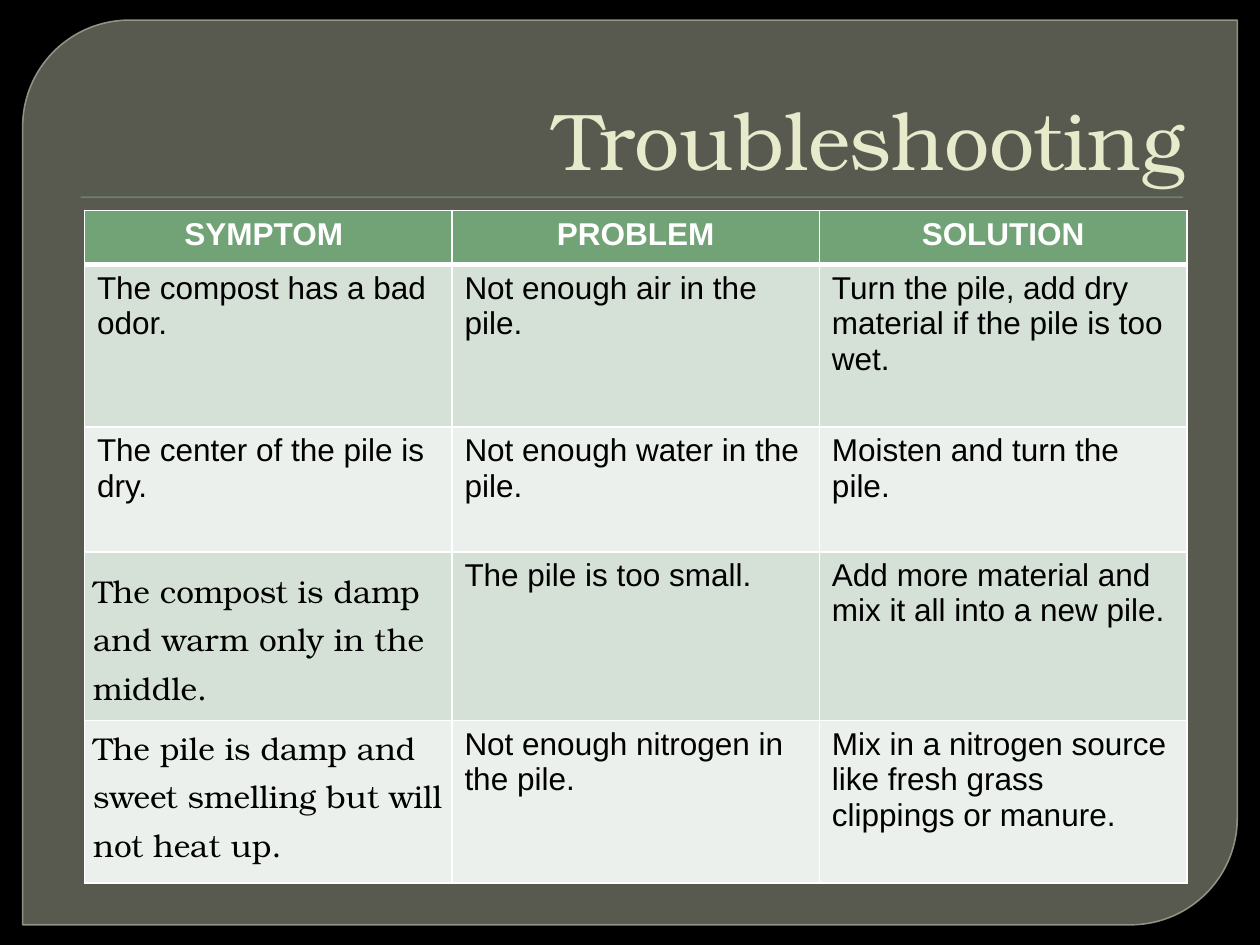
import pptx
import pptx.util
import pptx.dml.color
import pptx.enum.shapes
import pptx.enum.text
import pptx.oxml
import pptx.oxml.ns

Inches, Pt = pptx.util.Inches, pptx.util.Pt
ALIGN = pptx.enum.text.PP_ALIGN
ANCHOR = pptx.enum.text.MSO_ANCHOR
SHAPE = pptx.enum.shapes.MSO_SHAPE
SERIF, SANS = "TeX Gyre Bonum", "Arial"
WIDE, HIGH = 10, 7.5

TITLE = "Troubleshooting"
ROWS = [
    ("SYMPTOM ", "PROBLEM", "SOLUTION"),
    ("The compost has a bad odor.", "Not enough air in the pile.",
     "Turn the pile, add dry material if the pile is too wet."),
    ("The center of the pile is dry.", "Not enough water in the pile.",
     "Moisten and turn the pile."),
    ("The compost is damp and warm only in the middle.",
     "The pile is too small.",
     "Add more material and mix it all into a new pile."),
    ("The pile is damp and sweet smelling but will not heat up.",
     "Not enough nitrogen in the pile.",
     "Mix in a nitrogen source like fresh grass clippings or manure."),
]
TALL = [0.43, 1.29, 0.99, 1.34, 1.29]
GREEN, BANDS = "72A376", ("EBF0EC", "D5E0D6")
SERIF_ROWS = (3, 4)


def color(code):
    return pptx.dml.color.RGBColor.from_string(code)


def paint(fill, code):
    fill.solid()
    fill.fore_color.rgb = color(code)


def fade(node, share):
    tint = node.find(".//" + pptx.oxml.ns.qn("a:srgbClr"))
    tint.append(pptx.oxml.parse_xml(
        f'<a:alpha {pptx.oxml.ns.nsdecls("a")} val="{share * 1000}"/>'))


def style(par, size, face, code, bold=False):
    for run in par.runs:
        font = run.font
        font.size, font.name, font.bold = Pt(size), face, bold
        font.color.rgb = color(code)


def edge(cell, widths):
    props = cell._tc.get_or_add_tcPr()
    for spot, (side, width) in enumerate(widths.items()):
        props.insert(spot, pptx.oxml.parse_xml(
            f'<a:ln{side} {pptx.oxml.ns.nsdecls("a")} w="{Pt(width)}">'
            f'<a:solidFill><a:srgbClr val="FFFFFF"/></a:solidFill></a:ln{side}>'))


def shape(slide, kind, box, code):
    item = slide.shapes.add_shape(kind, *map(Inches, box))
    item.shadow.inherit = False
    paint(item.fill, code)
    item.line.fill.background()
    return item


def frame(slide):
    panel = shape(slide, SHAPE.ROUND_2_DIAG_RECTANGLE,
                  (0.18, 0.16, WIDE - 0.36, HIGH - 0.32), "888B7B")
    panel.adjustments[0], panel.adjustments[1] = 0.118, 0
    fade(panel.fill._xPr.find(pptx.oxml.ns.qn("a:solidFill")), 65)
    paint(panel.line.fill, "9DA090")
    panel.line.width = Pt(0.87)
    fade(panel.line._ln, 88)
    shape(slide, SHAPE.RECTANGLE, (0.64, 1.56, 8.75, 0.01), GREEN)


def title(slide):
    box = slide.shapes.add_textbox(*map(Inches, (0.5, 0.28, WIDE - 1, 1.25)))
    text = box.text_frame
    text.word_wrap, text.vertical_anchor = True, ANCHOR.BOTTOM
    text.text = TITLE
    par = text.paragraphs[0]
    par.alignment = ALIGN.RIGHT
    style(par, 46, SERIF, "E7EACB")


def grid(slide):
    count = len(ROWS[0])
    table = slide.shapes.add_table(
        len(ROWS), count, *map(Inches, (0.67, 1.67, 8.75, sum(TALL)))).table
    for col in table.columns:
        col.width = Inches(8.75 / count)
    for r, words in enumerate(ROWS):
        table.rows[r].height = Inches(TALL[r])
        head = r == 0
        for c, word in enumerate(words):
            cell = table.cell(r, c)
            cell.text = word
            par = cell.text_frame.paragraphs[0]
            serif = c == 0 and r in SERIF_ROWS
            style(par, 18, SERIF if serif else SANS,
                  "FFFFFF" if head else "000000", head)
            if head:
                par.alignment = ALIGN.CENTER
            if serif:
                par.line_spacing = 1.15
                cell.margin_left = cell.margin_right = Inches(0.07)
                cell.margin_top = cell.margin_bottom = 0
                if r == 3:
                    cell.vertical_anchor = ANCHOR.MIDDLE
            paint(cell.fill, GREEN if head else BANDS[r % 2])
            edge(cell, {"L": 1, "R": 1, "T": 3 if r == 1 else 1,
                        "B": 3 if head else 1})


def main():
    deck = pptx.Presentation()
    deck.slide_width, deck.slide_height = Inches(WIDE), Inches(HIGH)
    slide = deck.slides.add_slide(deck.slide_layouts[6])
    paint(slide.background.fill, "000000")
    frame(slide)
    title(slide)
    grid(slide)
    deck.save("out.pptx")


if __name__ == "__main__":
    main()
